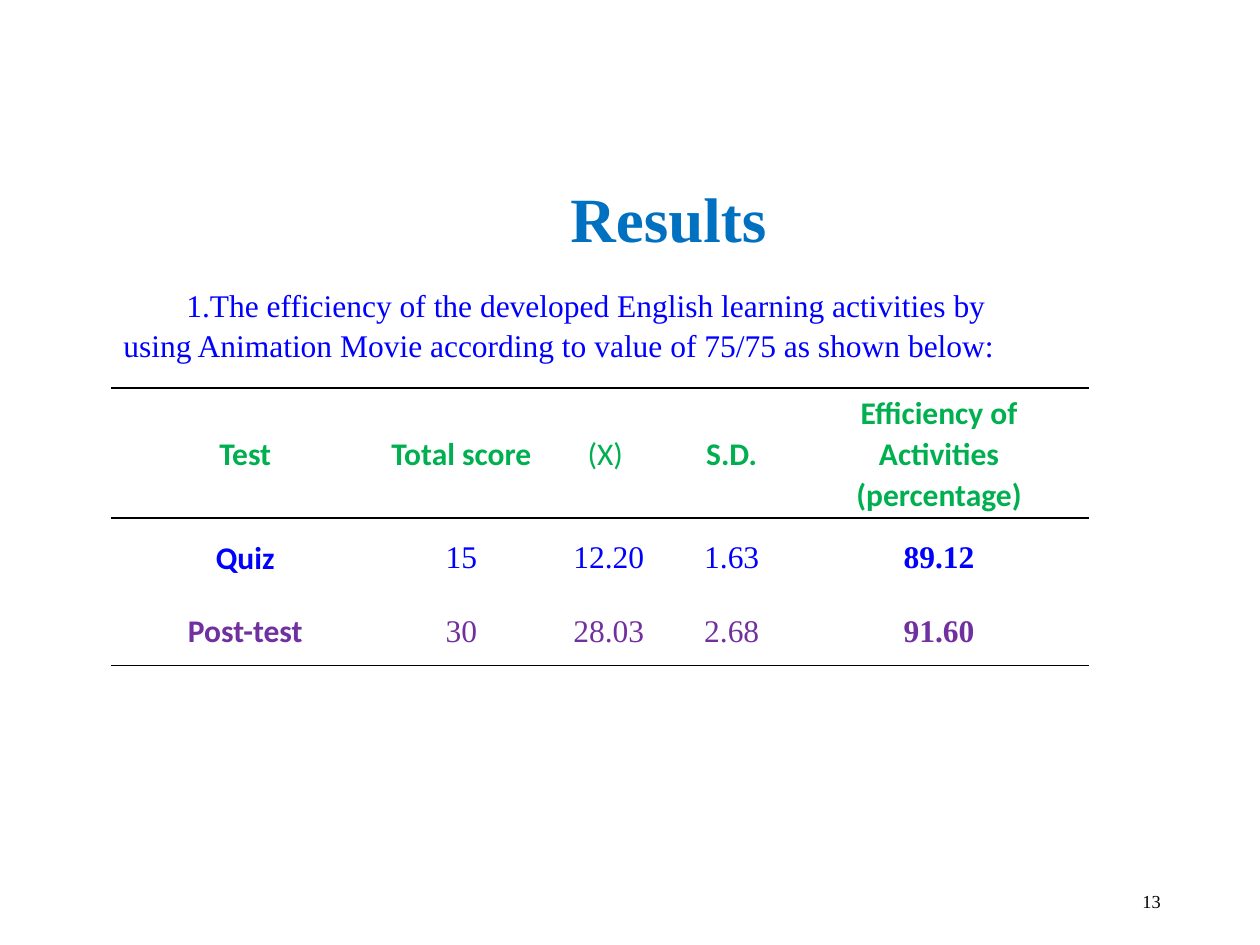
from pptx import Presentation
from pptx.dml.color import RGBColor
from pptx.enum.text import MSO_ANCHOR, PP_ALIGN
from pptx.oxml.ns import qn
from pptx.util import Pt
from lxml import etree

LEFT, CENTER, RIGHT = PP_ALIGN.LEFT, PP_ALIGN.CENTER, PP_ALIGN.RIGHT
TOP, MIDDLE = MSO_ANCHOR.TOP, MSO_ANCHOR.MIDDLE

BLACK = RGBColor(0x00, 0x00, 0x00)
SKY = RGBColor(0x00, 0x70, 0xC0)
BLUE = RGBColor(0x00, 0x00, 0xFF)
GREEN = RGBColor(0x00, 0xB0, 0x50)
PURPLE = RGBColor(0x70, 0x30, 0xA0)

SERIF, SANS = "Times New Roman", "Calibri"

COLUMN_WIDTHS = [153.5, 93.5, 75, 65.5, 171.5]
ROW_HEIGHTS = [74.2, 44.6, 39.6]
ROWS = [
    (GREEN, ["Test", "Total score", "(X) ", "S.D.", "Efficiency of Activities (percentage)"]),
    (BLUE, ["Quiz", "15", "12.20", "1.63", "89.12"]),
    (PURPLE, ["Post-test", "30", "28.03", "2.68", "91.60"]),
]


def write(para, text, align, line_spacing, font):
    para.alignment = align
    para.line_spacing = line_spacing
    span = para.add_run()
    span.text = text
    for name, value in font.items():
        if name == "color":
            span.font.color.rgb = value
        else:
            setattr(span.font, name, value)


def add_text(page, box, text, align, anchor, font, line_spacing=1.07, space_after=8, indent=0):
    left, top, width, height = (Pt(length) for length in box)
    frame = page.shapes.add_textbox(left, top, width, height).text_frame
    frame.word_wrap = True
    frame.vertical_anchor = anchor
    para = frame.paragraphs[0]
    write(para, text, align, line_spacing, font)
    para.space_after = Pt(space_after)
    if indent:
        properties = para._p.get_or_add_pPr()
        properties.set("marL", "0")
        properties.set("indent", str(Pt(indent)))


def set_borders(cell, ruled_sides):
    properties = cell._tc.get_or_add_tcPr()
    for position, side in enumerate("LRTB"):
        line = etree.Element(qn(f"a:ln{side}"))
        if side in ruled_sides:
            line.set("w", str(Pt(1)))
            fill = etree.SubElement(line, qn("a:solidFill"))
            etree.SubElement(fill, qn("a:srgbClr"), val=str(BLACK))
        else:
            etree.SubElement(line, qn("a:noFill"))
        properties.insert(position, line)


def add_results_table(page, box):
    left, top, width, height = (Pt(length) for length in box)
    table = page.shapes.add_table(len(ROWS), len(COLUMN_WIDTHS), left, top, width, height).table
    table.first_row = table.horz_banding = False
    for column, column_width in zip(table.columns, COLUMN_WIDTHS):
        column.width = Pt(column_width)
    for row, row_height in zip(table.rows, ROW_HEIGHTS):
        row.height = Pt(row_height)

    last_column = len(COLUMN_WIDTHS) - 1
    ruled_sides = ["TB", "T", "B"]
    for row_index, (color, texts) in enumerate(ROWS):
        is_header = row_index == 0
        for column_index, text in enumerate(texts):
            cell = table.cell(row_index, column_index)
            cell.fill.background()
            cell.vertical_anchor = MIDDLE
            cell.margin_left = cell.margin_right = Pt(5)
            cell.margin_top = cell.margin_bottom = Pt(0)
            set_borders(cell, ruled_sides[row_index])
            bold = column_index in (0, last_column) or (is_header and column_index != 2)
            font = {
                "name": SANS if is_header or column_index == 0 else SERIF,
                "size": Pt(18),
                "bold": bold,
                "color": color,
            }
            write(cell.text_frame.paragraphs[0], text, CENTER, 1.07, font)


def build_results_page(page):
    add_text(page, (508.3, 500.4, 162, 28.8), "13", RIGHT, MIDDLE,
             {"name": SERIF, "size": Pt(10.5), "color": BLACK},
             line_spacing=1, space_after=0)
    add_text(page, (162.7, 87.1, 438.5, 70.6), "Results", CENTER, MIDDLE,
             {"name": SERIF, "size": Pt(36), "bold": True, "color": SKY})
    add_text(page, (63.4, 158.4, 520.6, 54),
             "1.The efficiency of the developed English learning activities by "
             "using Animation Movie according to value of 75/75 as shown below:",
             LEFT, TOP, {"name": SERIF, "size": Pt(18), "color": BLUE}, indent=36)
    add_results_table(page, (63.4, 221.8, sum(COLUMN_WIDTHS), sum(ROW_HEIGHTS)))


def main():
    deck = Presentation()
    deck.slide_width, deck.slide_height = Pt(720), Pt(540)
    build_results_page(deck.slides.add_slide(deck.slide_layouts[6]))
    deck.save("out.pptx")


if __name__ == "__main__":
    main()
